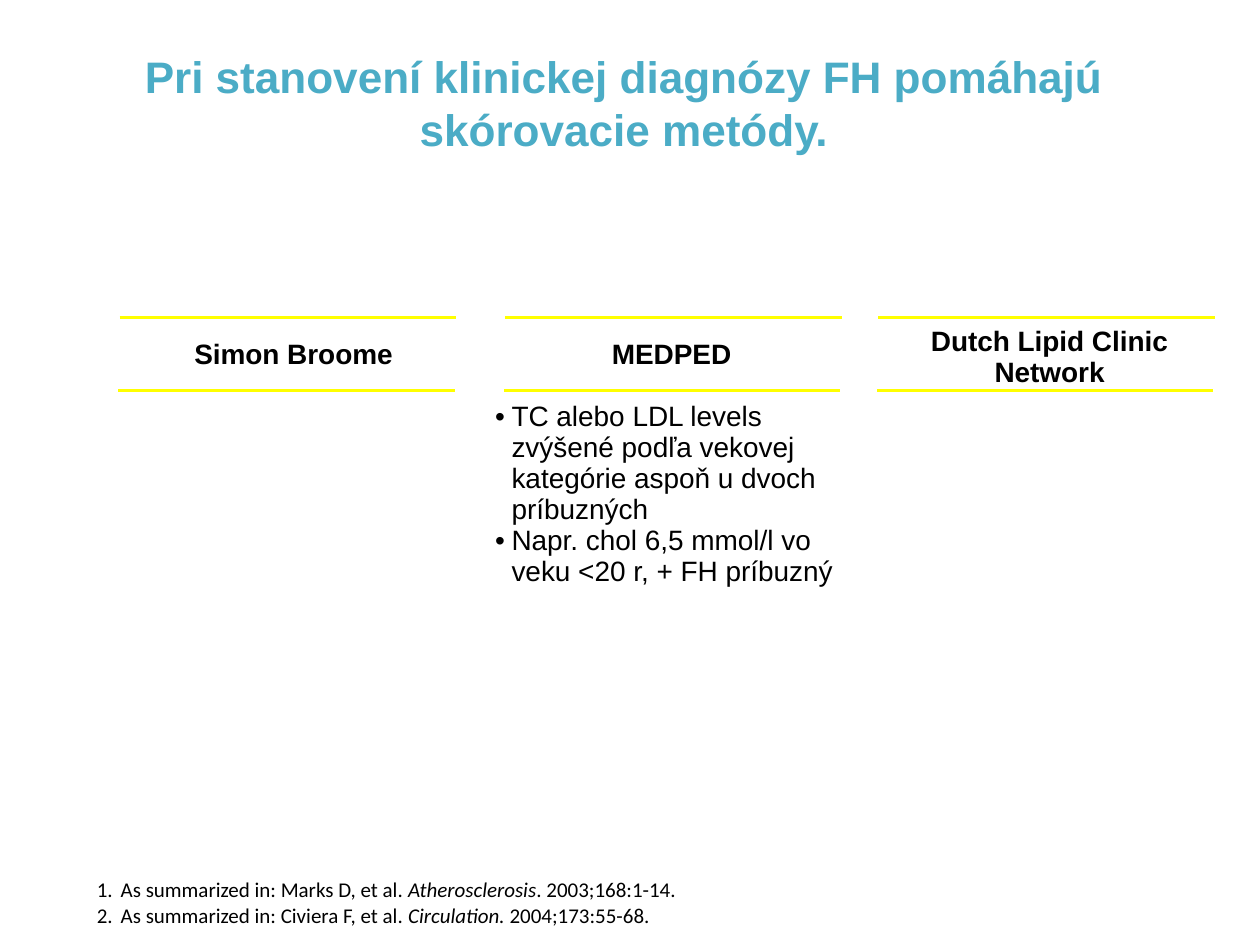
from pptx import Presentation
from pptx.dml.color import RGBColor
from pptx.enum.shapes import MSO_CONNECTOR
from pptx.enum.text import MSO_ANCHOR, PP_ALIGN
from pptx.oxml.ns import qn
from pptx.util import Inches, Pt
from lxml import etree

CENTER, LEFT = PP_ALIGN.CENTER, PP_ALIGN.LEFT
TOP, MIDDLE, BOTTOM = MSO_ANCHOR.TOP, MSO_ANCHOR.MIDDLE, MSO_ANCHOR.BOTTOM
STRAIGHT = MSO_CONNECTOR.STRAIGHT


def rgb(value):
    """Turn a hex string into a colour."""
    return RGBColor.from_string(value)


class SlideBuilder:
    """Hold the style and the current slide."""

    HEADING, BODY = "Arial", "Calibri"
    ACCENT, INK, RULE = "4BACC6", "000000", "FFFF00"

    def __init__(self, prs):
        """Add a blank slide."""
        self.s = prs.slides.add_slide(prs.slide_layouts[6])

    def style(self, p, size, font, color, bold=False, align=LEFT):
        """Format a paragraph and its runs."""
        p.alignment = align
        for r in p.runs:
            r.font.size, r.font.name, r.font.bold = Pt(size), font, bold
            r.font.color.rgb = rgb(color)

    def bullet(self, p, indent, tag, **attributes):
        """Give a paragraph a hanging bullet or number."""
        pPr = p._p.get_or_add_pPr()
        pPr.set("marL", str(Inches(indent)))
        pPr.set("indent", str(-Inches(indent)))
        etree.SubElement(pPr, qn("a:buFont"), typeface="Arial")
        etree.SubElement(pPr, qn(tag), **attributes)

    def textbox(self, x, y, w, h, anchor):
        """Add a wrapping text box and return its frame."""
        sp = self.s.shapes.add_textbox(Inches(x), Inches(y), Inches(w), Inches(h))
        tf = sp.text_frame
        tf.word_wrap, tf.vertical_anchor = True, anchor
        return tf

    def title(self, text, x, y, w, h):
        """Add the slide title."""
        tf = self.textbox(x, y, w, h, MIDDLE)
        tf.text = text
        self.style(tf.paragraphs[0], 25.2, self.HEADING, self.ACCENT, True, CENTER)

    def table(self, heads, bodies, x, y, col_w, row_h, h):
        """Add a plain table of headings above bulleted bodies."""
        frame = self.s.shapes.add_table(2, len(heads), Inches(x), Inches(y),
                                        Inches(col_w * len(heads)), Inches(h))
        table = frame.table
        table.first_row = table.horz_banding = False
        for row in table.rows:
            row.height = Inches(row_h)
        frame.height = Inches(h)
        for i, (head, anchor) in enumerate(heads):
            top, body = table.cell(0, i), table.cell(1, i)
            top.fill.background()
            body.fill.background()
            top.text, top.vertical_anchor = head, anchor
            self.style(top.text_frame.paragraphs[0], 16, self.HEADING, self.INK, True, CENTER)
            if i in bodies:
                body.text, body.vertical_anchor = "\n".join(bodies[i]), TOP
                for p in body.text_frame.paragraphs:
                    self.style(p, 16, self.HEADING, self.INK)
                    self.bullet(p, 0.13, "a:buChar", char="•")

    def references(self, items, x, y, w, h):
        """Add numbered references with italic journal names."""
        tf = self.textbox(x, y, w, h, TOP)
        for i, parts in enumerate(items):
            p = tf.add_paragraph() if i else tf.paragraphs[0]
            for part in parts:
                p.add_run().text = part
            self.style(p, 12, self.BODY, self.INK)
            p.runs[1].font.italic = True
            self.bullet(p, 0.19, "a:buAutoNum", type="arabicPeriod")

    def rule(self, x, y, w):
        """Add a horizontal rule."""
        line = self.s.shapes.add_connector(STRAIGHT, Inches(x), Inches(y),
                                           Inches(x + w), Inches(y))
        line.line.color.rgb = rgb(self.RULE)
        line.line.width = Pt(2)
        etree.SubElement(line._element.spPr, qn("a:effectLst"))


def main():
    """Build the slide and save it."""
    prs = Presentation()
    prs.slide_width, prs.slide_height = Inches(10), Inches(7.5)
    slide = SlideBuilder(prs)
    slide.title("Pri stanovení klinickej diagnózy FH pomáhajú \vskórovacie metódy. ",
                0, 0.3, 10, 1.03)
    heads = [("Simon Broome", MIDDLE), ("MEDPED", MIDDLE),
             ("Dutch Lipid Clinic Network", BOTTOM)]
    bodies = {1: ["TC alebo LDL levels zvýšené podľa vekovej kategórie aspoň u dvoch príbuzných",
                  "Napr. chol 6,5 mmol/l vo veku <20 r, + FH príbuzný"]}
    slide.table(heads, bodies, 0.83, 2.5, 3, 0.41, 2.87)
    slide.references([
        ("As summarized in: Marks D, et al. ", "Atherosclerosis", ". 2003;168:1-14."),
        ("As summarized in: Civiera F, et al. ", "Circulation. ", "2004;173:55-68."),
    ], 0.67, 6.91, 9.17, 0.51)
    for y, shift in ((3.1, 0), (2.52, 0.01)):
        for x in (0.94, 4, 6.96):
            slide.rule(x + shift, y, 2.67)
    prs.save("out.pptx")


if __name__ == "__main__":
    main()
